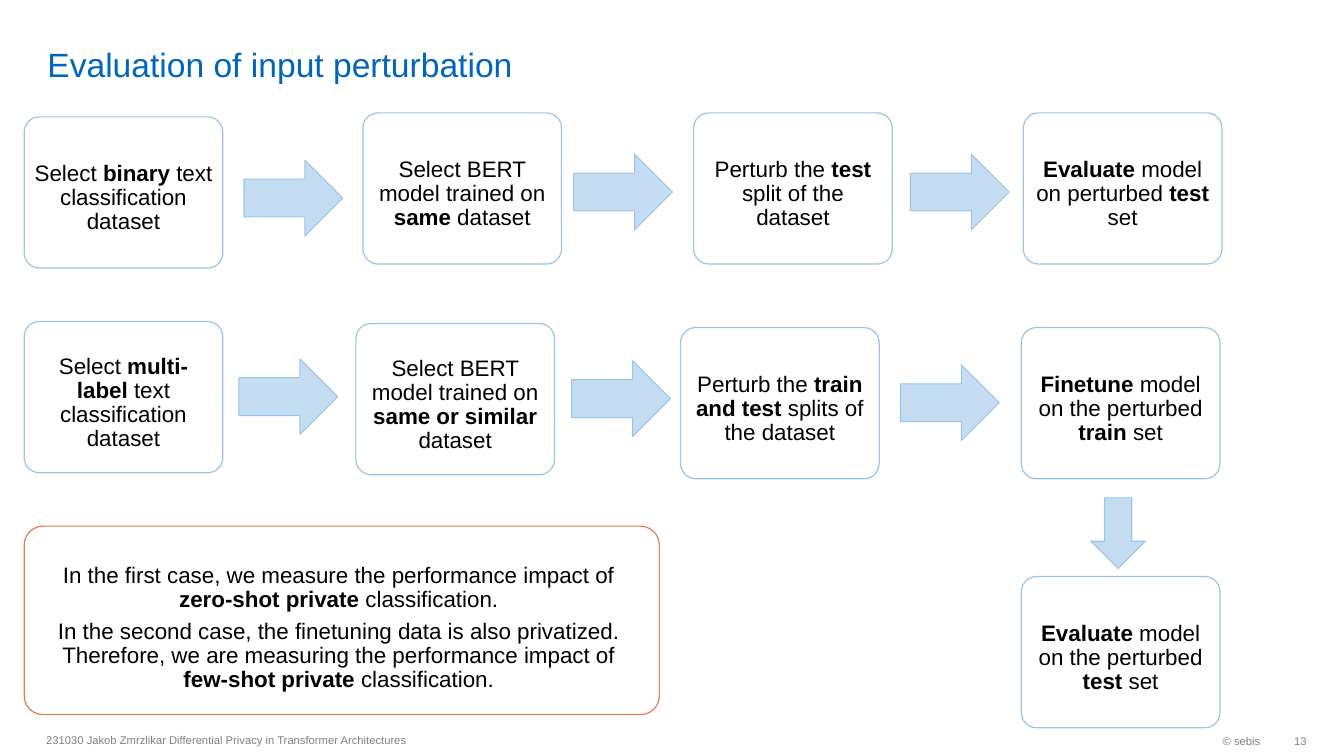
from pptx import Presentation
from pptx.dml.color import RGBColor
from pptx.enum.shapes import MSO_SHAPE
from pptx.enum.text import MSO_ANCHOR, MSO_AUTO_SIZE, PP_ALIGN
from pptx.util import Inches, Pt

ROUNDED = MSO_SHAPE.ROUNDED_RECTANGLE
ARROW = MSO_SHAPE.RIGHT_ARROW
MIDDLE, BOTTOM = MSO_ANCHOR.MIDDLE, MSO_ANCHOR.BOTTOM
LEFT, CENTER, RIGHT = PP_ALIGN.LEFT, PP_ALIGN.CENTER, PP_ALIGN.RIGHT
NO_AUTOFIT = MSO_AUTO_SIZE.NONE

BLUE, PALE_BLUE, LINE_BLUE = "0065BD", "C4DCF2", "98C6EA"
ORANGE, GRAY, BLACK, WHITE = "E37C4D", "808080", "000000", "FFFFFF"

STEP_WIDTH, STEP_HEIGHT = 1.97, 1.5
ARROW_WIDTH, ARROW_HEIGHT = 0.98, 0.75


def add_outlined(kind, place, fill, line, line_width):
    shape = page.shapes.add_shape(kind, *map(Inches, place))
    shape.shadow.inherit = False
    shape.fill.solid()
    shape.fill.fore_color.rgb = RGBColor.from_string(fill)
    shape.line.color.rgb = RGBColor.from_string(line)
    shape.line.width = Pt(line_width)
    return shape


def write_text(box, paragraphs, size, color, align, anchor, insets, spacing=1.0):
    frame = box.text_frame
    margins = dict(zip(("margin_left", "margin_top", "margin_right", "margin_bottom"),
                       map(Inches, insets)))
    frame_format = {"word_wrap": True, "auto_size": NO_AUTOFIT,
                    "vertical_anchor": anchor, **margins}
    for name, value in frame_format.items():
        setattr(frame, name, value)
    for number, text in enumerate(paragraphs):
        para = frame.paragraphs[0] if number == 0 else frame.add_paragraph()
        para_format = {"alignment": align, "line_spacing": spacing,
                       "space_before": Pt(5.6 if number else 0)}
        for name, value in para_format.items():
            setattr(para, name, value)
        for position, part in enumerate(text.split("**")):
            if part:
                span = para.add_run()
                span.text = part
                span_format = {"name": "Arial", "size": Pt(size), "bold": position % 2 == 1}
                for name, value in span_format.items():
                    setattr(span.font, name, value)
                span.font.color.rgb = RGBColor.from_string(color)


deck = Presentation()
deck.slide_width, deck.slide_height = Inches(13.33), Inches(7.5)
page = deck.slides.add_slide(deck.slide_layouts[5])

title = page.shapes.title
title.left, title.top, title.width, title.height = map(Inches, (0.37, 0.05, 11.58, 0.79))
write_text(title, ["Evaluation of input perturbation"], 24, BLUE, LEFT, BOTTOM, (0.1, 0, 0.1, 0))

steps = [
    (0.24, 1.16, "Select **binary** text classification dataset"),
    (3.6, 1.12, "Select BERT model trained on **same** dataset"),
    (6.88, 1.12, "Perturb the **test** split of the dataset"),
    (10.15, 1.12, "**Evaluate** model on perturbed **test** set"),
    (0.24, 3.19, "Select **multi-label** text classification dataset"),
    (3.53, 3.21, "Select BERT model trained on **same or similar** dataset"),
    (6.75, 3.25, "Perturb the **train and test** splits of the dataset"),
    (10.13, 3.25, "**Finetune** model on the perturbed **train** set"),
    (10.13, 5.72, "**Evaluate** model on the perturbed **test** set"),
]
for left, top, text in steps:
    step = add_outlined(ROUNDED, (left, top, STEP_WIDTH, STEP_HEIGHT), WHITE, LINE_BLUE, 0.85)
    step.adjustments[0] = 0.1
    write_text(step, [text], 16, BLACK, CENTER, MIDDLE, (0.06, 0.12, 0.06, 0), 0.9)

arrows = [(2.42, 1.59), (5.69, 1.53), (9.03, 1.53), (2.37, 3.56), (5.67, 3.58), (8.93, 3.62)]
for left, top in arrows:
    add_outlined(ARROW, (left, top, ARROW_WIDTH, ARROW_HEIGHT), PALE_BLUE, LINE_BLUE, 0.75)
down_arrow = add_outlined(ARROW, (10.74, 5.02, 0.7, 0.54), PALE_BLUE, LINE_BLUE, 0.75)
down_arrow.rotation = 90

findings = [
    "In the first case, we measure the performance impact of "
    "**zero-shot private **classification.",
    "In the second case, the finetuning data is also privatized. Therefore, we are "
    "measuring the performance impact of **few-shot private **classification.",
]
summary = add_outlined(ROUNDED, (0.24, 5.22, 6.3, 1.87), WHITE, ORANGE, 0.85)
summary.adjustments[0] = 0.1
write_text(summary, findings, 16, BLACK, CENTER, MIDDLE, (0.16, 0.16, 0.22, 0), 0.9)

footers = [
    (0.36, 7.18, 6.3, LEFT, 0.1,
     "231030 Jakob Zmrzlikar Differential Privacy in Transformer Architectures"),
    (10.26, 7.19, 2.34, RIGHT, 0.1, "© sebis"),
    (12.6, 7.19, 0.36, RIGHT, 0, "13"),
]
for left, top, width, align, right_inset, text in footers:
    footer = page.shapes.add_textbox(*map(Inches, (left, top, width, 0.32)))
    write_text(footer, [text], 8, GRAY, align, MIDDLE, (0.1, 0.05, right_inset, 0.05))

deck.save("out.pptx")
